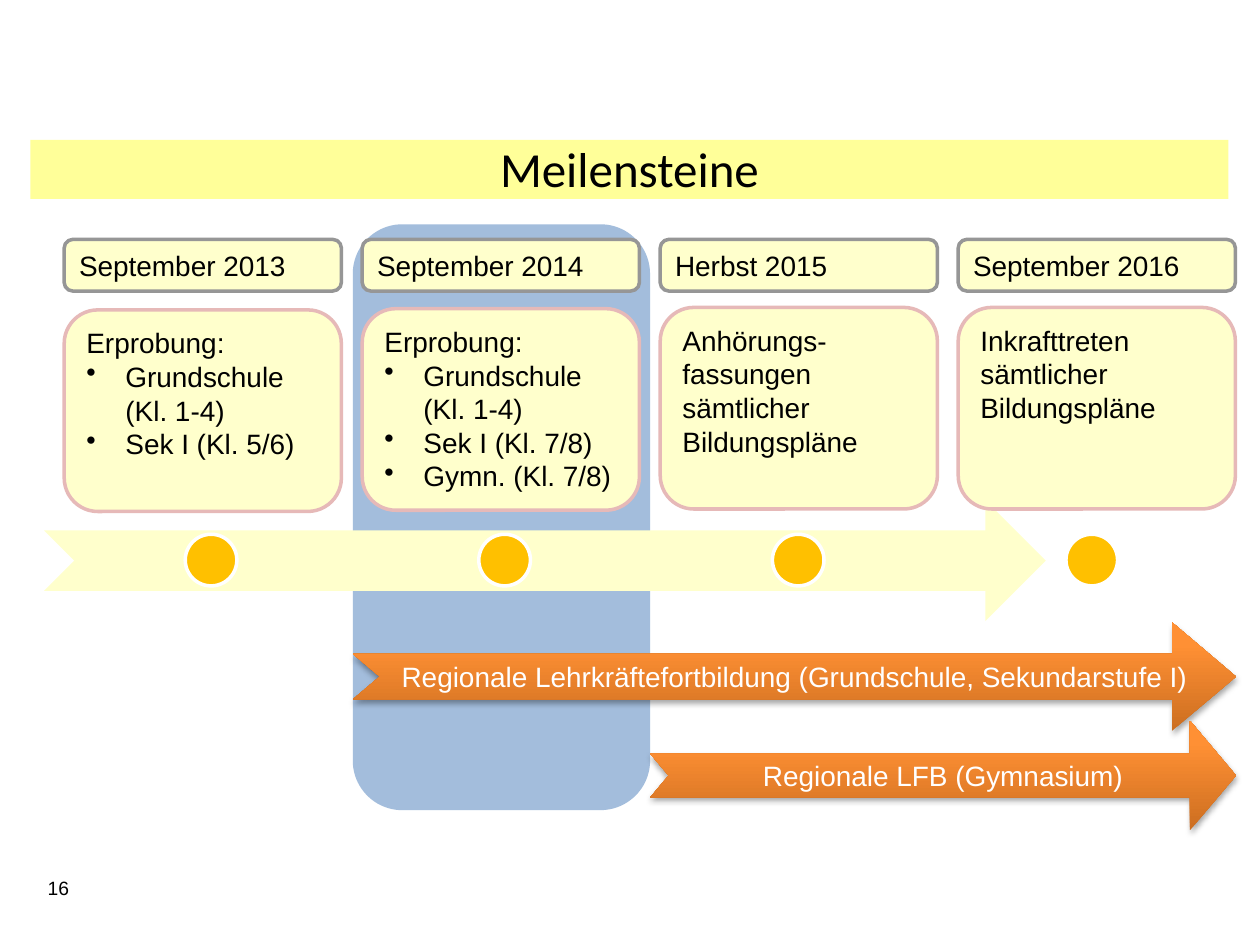
"""Build the milestone slide: four dated cards over a timeline with training arrows."""
import pptx
import pptx.util
import pptx.dml.color
import pptx.enum.shapes
import pptx.enum.text
import pptx.oxml
import pptx.oxml.ns

KIND = pptx.enum.shapes.MSO_SHAPE
ALIGN = pptx.enum.text.PP_ALIGN
ANCHOR = pptx.enum.text.MSO_ANCHOR
INCH = pptx.util.Inches

TITLE = "Meilensteine"
PAGE = "16"
STEPS = [
    ("September 2013", 2.46, ["Erprobung:", ("•", "Grundschule"), ("", "(Kl. 1-4)"),
                              ("•", "Sek I (Kl. 5/6)")]),
    ("September 2014", 2.45, ["Erprobung:", ("•", "Grundschule (Kl. 1-4)"),
                              ("•", "Sek I (Kl. 7/8)"), ("•", "Gymn. (Kl. 7/8)")]),
    ("Herbst 2015", 2.44, ["Anhörungs-fassungen sämtlicher Bildungspläne"]),
    ("September 2016", 2.44, ["Inkrafttreten sämtlicher Bildungspläne"]),
]
COURSES = [
    ("Regionale Lehrkräftefortbildung (Grundschule, Sekundarstufe I)",
     (2.8, 4.94, 7.01, 0.86), (0.42, 0.59)),
    ("Regionale LFB (Gymnasium)", (5.16, 5.72, 4.65, 0.87), (0.4, 0.42)),
]
THEME = {
    "bar": "FFFF99", "focus": "4F81BD", "pale": "FFFFCC", "dot": "FFC000",
    "grey": "969696", "rose": "E6B9B8", "white": "FFFFFF", "ink": "000000",
    "ramp": [(0, "CC6E20"), (80, "FF9034"), (100, "FF9136")],
    "head": 28, "body": 16, "note": 11, "edge": 2,
    "font": "Arial", "title": "Calibri",
}
LEFT, STEP, WIDE = 0.51, 2.365, 2.2
DOT, PITCH, SIZE = 1.47, 2.33, 0.41
HANG = INCH(0.31)


def tint(name):
    return pptx.dml.color.RGBColor.from_string(THEME[name])


def node(xml):
    return pptx.oxml.parse_xml(xml.replace(">", " " + pptx.oxml.ns.nsdecls("a") + ">", 1))


def draw(slide, kind, box, fill, line=None, adj=()):
    shape = slide.shapes.add_shape(kind, *map(INCH, box))
    shape.shadow.inherit = False
    shape.fill.solid()
    shape.fill.fore_color.rgb = tint(fill)
    if line:
        shape.line.color.rgb = tint(line)
        shape.line.width = pptx.util.Pt(THEME["edge"])
    else:
        shape.line.fill.background()
    for i, share in enumerate(adj):
        shape.adjustments[i] = share
    return shape


def write(shape, text, size="body", font="font", ink="ink", align=ALIGN.LEFT, anchor=ANCHOR.MIDDLE):
    frame = shape.text_frame
    frame.word_wrap = True
    frame.vertical_anchor = anchor
    for i, item in enumerate(text):
        mark, words = item if isinstance(item, tuple) else (None, item)
        para = frame.add_paragraph() if i else frame.paragraphs[0]
        para.alignment = align
        if mark is not None:
            props = para._p.get_or_add_pPr()
            props.set("marL", str(HANG))
            props.set("indent", str(-HANG if mark else 0))
            if mark:
                props.append(node(f'<a:buChar char="{mark}"/>'.replace("/>", "></a:buChar>")))
        run = para.add_run()
        run.text = words
        run.font.name = THEME[font]
        run.font.size = pptx.util.Pt(THEME[size])
        run.font.color.rgb = tint(ink)


def glow(shape):
    props = shape._element.spPr
    stops = "".join(f'<a:gs pos="{pos * 1000}"><a:srgbClr val="{rgb}"/></a:gs>'
                    for pos, rgb in THEME["ramp"])
    old = props.find(pptx.oxml.ns.qn("a:solidFill"))
    props.replace(old, node(f'<a:gradFill rotWithShape="1"><a:gsLst>{stops}</a:gsLst>'
                            '<a:lin ang="16200000" scaled="0"/></a:gradFill>'))
    cast = props.find(pptx.oxml.ns.qn("a:effectLst"))
    cast.append(node(
        f'<a:outerShdw blurRad="{pptx.util.Pt(3.1)}" dist="{pptx.util.Pt(1.8)}" dir="5400000" '
        f'rotWithShape="0"><a:srgbClr val="{THEME["ink"]}"><a:alpha val="35000"/></a:srgbClr>'
        '</a:outerShdw>'))


def main():
    deck = pptx.Presentation()
    deck.slide_width, deck.slide_height = INCH(10), INCH(7.5)
    slide = deck.slides.add_slide(deck.slide_layouts[6])

    draw(slide, KIND.RECTANGLE, (0.24, 1.11, 9.51, 0.47), "bar")
    focus = draw(slide, KIND.ROUNDED_RECTANGLE, (2.8, 1.78, 2.36, 4.65), "focus")
    color = focus._element.spPr.find(".//" + pptx.oxml.ns.qn("a:srgbClr"))
    color.append(node('<a:alpha val="52000"></a:alpha>'))
    title = slide.shapes.add_textbox(*map(INCH, (0.24, 1.05, 9.51, 0.57)))
    write(title, [TITLE], size="head", font="title", align=ALIGN.CENTER)

    for text, box, adj in COURSES:
        arrow = draw(slide, KIND.NOTCHED_RIGHT_ARROW, box, "pale", adj=adj)
        glow(arrow)
        write(arrow, [text], ink="white", align=ALIGN.CENTER)

    draw(slide, KIND.NOTCHED_RIGHT_ARROW, (0.35, 3.97, 7.95, 0.96), "pale")
    for i in reversed(range(len(STEPS))):
        draw(slide, KIND.OVAL, (DOT + i * PITCH, 4.24, SIZE, SIZE), "dot", "white")
    page = slide.shapes.add_textbox(*map(INCH, (0.28, 6.9, 0.55, 0.29)))
    write(page, [PAGE], size="note")

    for i, (date, top, lines) in enumerate(STEPS):
        left = LEFT + i * STEP
        label = draw(slide, KIND.ROUNDED_RECTANGLE, (left, 1.9, WIDE, SIZE), "pale", "grey")
        write(label, [date])
        card = draw(slide, KIND.ROUNDED_RECTANGLE, (left, top, WIDE, 1.6), "pale", "rose")
        write(card, lines, anchor=ANCHOR.TOP)
    deck.save("out.pptx")


if __name__ == "__main__":
    main()
